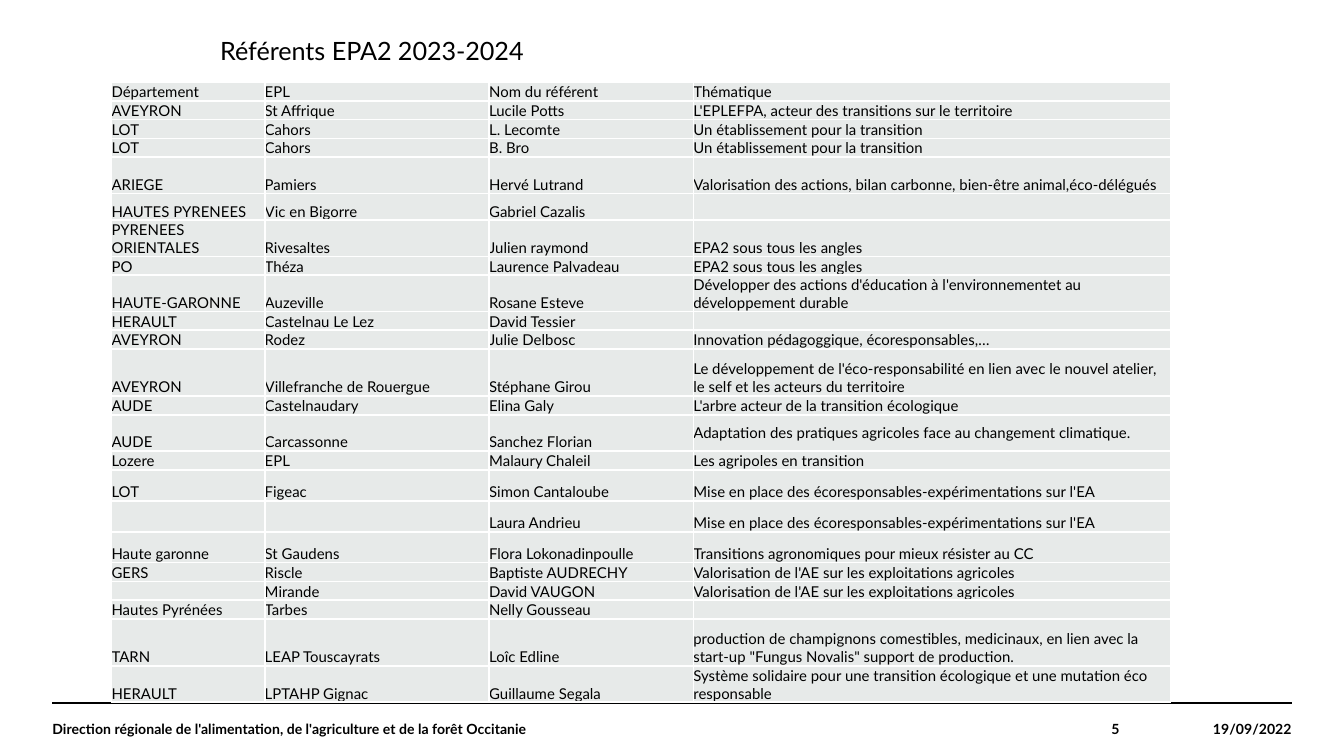
from lxml import etree
from pptx import Presentation
from pptx.dml.color import RGBColor
from pptx.enum.shapes import MSO_CONNECTOR
from pptx.enum.text import MSO_ANCHOR, MSO_AUTO_SIZE, PP_ALIGN
from pptx.oxml.ns import qn
from pptx.util import Inches, Pt

LEFT, RIGHT = PP_ALIGN.LEFT, PP_ALIGN.RIGHT
MIDDLE, BOTTOM = MSO_ANCHOR.MIDDLE, MSO_ANCHOR.BOTTOM
STRAIGHT = MSO_CONNECTOR.STRAIGHT
GROW = MSO_AUTO_SIZE.SHAPE_TO_FIT_TEXT

COLUMNS = [1.14, 1.67, 1.52, 3.55]
ROWS = [
    (0.14, "Département", "EPL", "Nom du référent", "Thématique"),
    (0.14, "AVEYRON", "St Affrique", "Lucile Potts", "L'EPLEFPA, acteur des transitions sur le territoire"),
    (0.14, "LOT", "Cahors", "L. Lecomte", "Un établissement pour la transition"),
    (0.14, "LOT", "Cahors", "B. Bro", "Un établissement pour la transition"),
    (0.27, "ARIEGE", "Pamiers", "Hervé Lutrand",
     "Valorisation des actions, bilan carbonne, bien-être animal,éco-délégués"),
    (0.2, "HAUTES PYRENEES", "Vic en Bigorre", "Gabriel Cazalis", ""),
    (0.27, "PYRENEES ORIENTALES", "Rivesaltes", "Julien raymond", "EPA2 sous tous les angles"),
    (0.14, "PO", "Théza", "Laurence Palvadeau", "EPA2 sous tous les angles"),
    (0.27, "HAUTE-GARONNE", "Auzeville", "Rosane Esteve",
     "Développer des actions d'éducation à l'environnementet au développement durable"),
    (0.14, "HERAULT", "Castelnau Le Lez", "David Tessier", ""),
    (0.14, "AVEYRON", "Rodez", "Julie Delbosc", "Innovation pédagoggique, écoresponsables,…"),
    (0.35, "AVEYRON", "Villefranche de Rouergue", "Stéphane Girou",
     "Le développement de l'éco-responsabilité en lien avec le nouvel atelier, "
     "le self et les acteurs du territoire"),
    (0.14, "AUDE", "Castelnaudary", "Elina Galy", "L'arbre acteur de la transition écologique"),
    (0.27, "AUDE", "Carcassonne", "Sanchez Florian",
     "Adaptation des pratiques agricoles face au changement climatique."),
    (0.14, "Lozere", "EPL", "Malaury Chaleil", "Les agripoles en transition"),
    (0.23, "LOT", "Figeac", "Simon Cantaloube", "Mise en place des écoresponsables-expérimentations sur l'EA"),
    (0.23, "", "", "Laura Andrieu", "Mise en place des écoresponsables-expérimentations sur l'EA"),
    (0.23, "Haute garonne", "St Gaudens", "Flora Lokonadinpoulle",
     "Transitions agronomiques pour mieux résister au CC"),
    (0.14, "GERS", "Riscle", "Baptiste AUDRECHY", "Valorisation de l'AE sur les exploitations agricoles"),
    (0.14, "", "Mirande", "David VAUGON", "Valorisation de l'AE sur les exploitations agricoles"),
    (0.14, "Hautes Pyrénées", "Tarbes", "Nelly Gousseau", ""),
    (0.35, "TARN", "LEAP Touscayrats", "Loîc Edline",
     "production de champignons comestibles, medicinaux, en lien avec la "
     "start-up \"Fungus Novalis\" support de production."),
    (0.27, "HERAULT", "LPTAHP Gignac", "Guillaume Segala",
     "Système solidaire pour une transition écologique et une mutation éco responsable"),
]
CENTRED_CELL = (13, 3)


def rgb(value):
    return RGBColor.from_string(value)


class Deck:
    """Holds the style and the current slide, and draws each kind of element."""

    FONT, INK, FILL, BORDER = "Lato", "000000", "E7EAE9", "FFFFFF"

    def __init__(self, slide):
        self.s = slide

    def style(self, p, size, bold=False):
        p.font.name, p.font.size, p.font.bold = self.FONT, Pt(size), bold
        p.font.color.rgb = rgb(self.INK)

    def text(self, x, y, w, h, text, size, bold=False, align=LEFT, inset=True, grow=False):
        tf = self.s.shapes.add_textbox(Inches(x), Inches(y), Inches(w), Inches(h)).text_frame
        tf.word_wrap = True
        tf.vertical_anchor = MIDDLE
        if grow:
            tf.auto_size = GROW
        if not inset:
            tf.margin_left = tf.margin_right = tf.margin_top = tf.margin_bottom = 0
        p = tf.paragraphs[0]
        p.text, p.alignment = text, align
        self.style(p, size, bold)

    def line(self, x1, y1, x2, y2, width):
        cx = self.s.shapes.add_connector(STRAIGHT, Inches(x1), Inches(y1), Inches(x2), Inches(y2))
        cx.line.color.rgb, cx.line.width = rgb(self.INK), Pt(width)
        etree.SubElement(cx._element.spPr, qn("a:effectLst"))

    def cell(self, cell, text, size, anchor):
        cell.margin_left = cell.margin_right = cell.margin_top = cell.margin_bottom = 0
        cell.vertical_anchor = anchor
        tc_pr = cell._tc.get_or_add_tcPr()
        for side in ("lnL", "lnR", "lnT", "lnB"):
            ln = etree.SubElement(tc_pr, qn(f"a:{side}"), w=str(Pt(1)))
            fill = etree.SubElement(ln, qn("a:solidFill"))
            etree.SubElement(fill, qn("a:srgbClr"), val=self.BORDER)
        cell.fill.solid()
        cell.fill.fore_color.rgb = rgb(self.FILL)
        p = cell.text_frame.paragraphs[0]
        p.text = text
        self.style(p, size)
        if not text:
            etree.SubElement(p._p, qn("a:endParaRPr"), sz=str(size * 100))

    def table(self, x, y, columns, rows, size):
        height = sum(row[0] for row in rows)
        table = self.s.shapes.add_table(len(rows), len(columns), Inches(x), Inches(y),
                                        Inches(sum(columns)), Inches(height)).table
        table.first_row = table.horz_banding = False
        for column, width in zip(table.columns, columns):
            column.width = Inches(width)
        for i, (row_height, *texts) in enumerate(rows):
            table.rows[i].height = Inches(row_height)
            for j, text in enumerate(texts):
                anchor = MIDDLE if (i, j) == CENTRED_CELL else BOTTOM
                self.cell(table.cell(i, j), text, size, anchor)


def main():
    prs = Presentation()
    prs.slide_width, prs.slide_height = Inches(10), Inches(10 * 9 / 16)
    deck = Deck(prs.slides.add_slide(prs.slide_layouts[6]))
    deck.line(0.39, 5.23, 9.61, 5.23, 0.8)
    footer = [
        (8.33, 1.28, "19/09/2022", RIGHT),
        (0.39, 6.46, "Direction régionale de l'alimentation, de l'agriculture et de la forêt Occitanie", LEFT),
        (6.85, 1.48, "5", RIGHT),
    ]
    for x, w, text, align in footer:
        deck.text(x, 5.23, w, 0.39, text, 7.5, bold=True, align=align, inset=False)
    deck.text(1.54, 0.21, 6.22, 0.33, "Référents EPA2 2023-2024", 13.5, grow=True)
    deck.table(0.83, 0.61, COLUMNS, ROWS, 8)
    prs.save("out.pptx")


if __name__ == "__main__":
    main()
